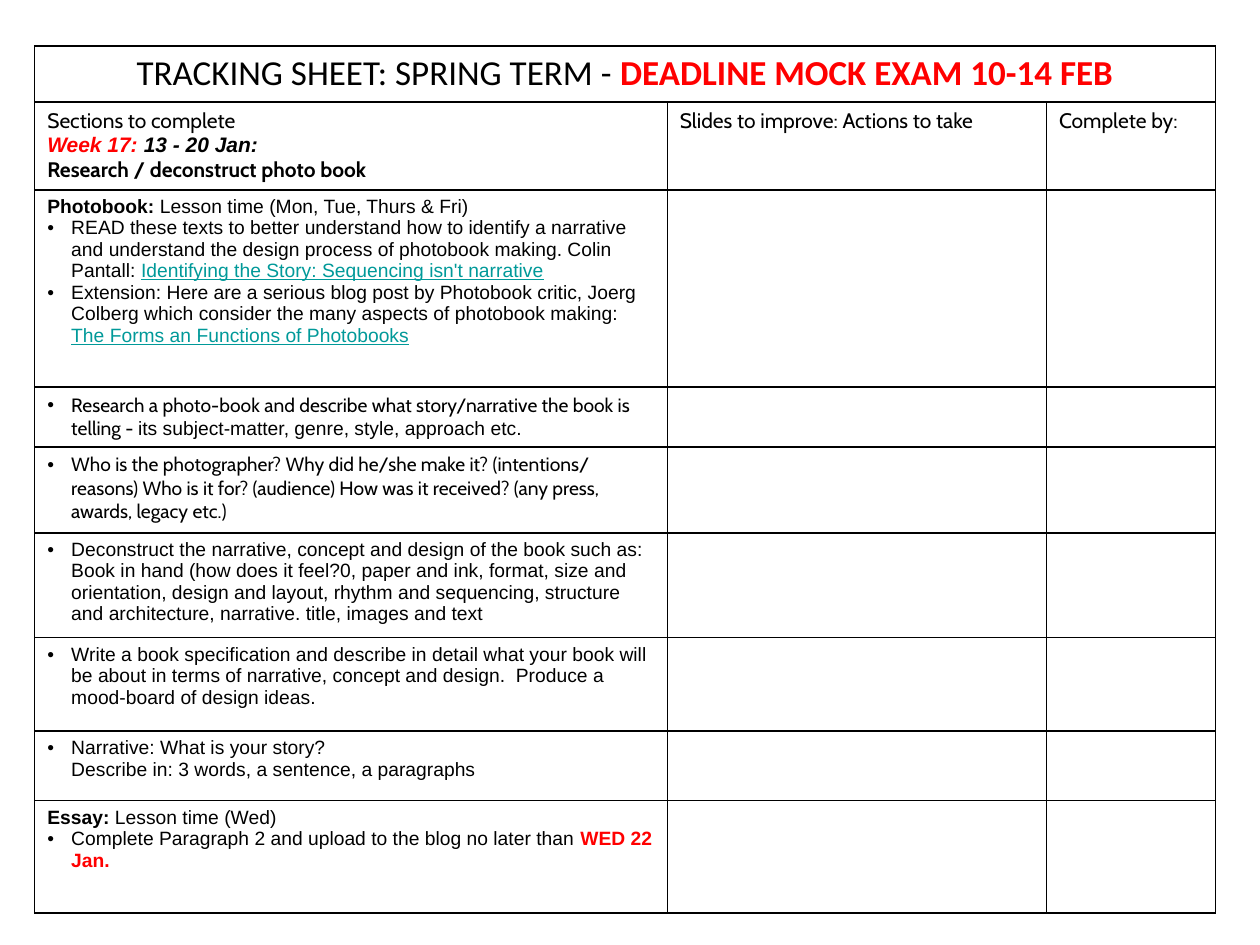
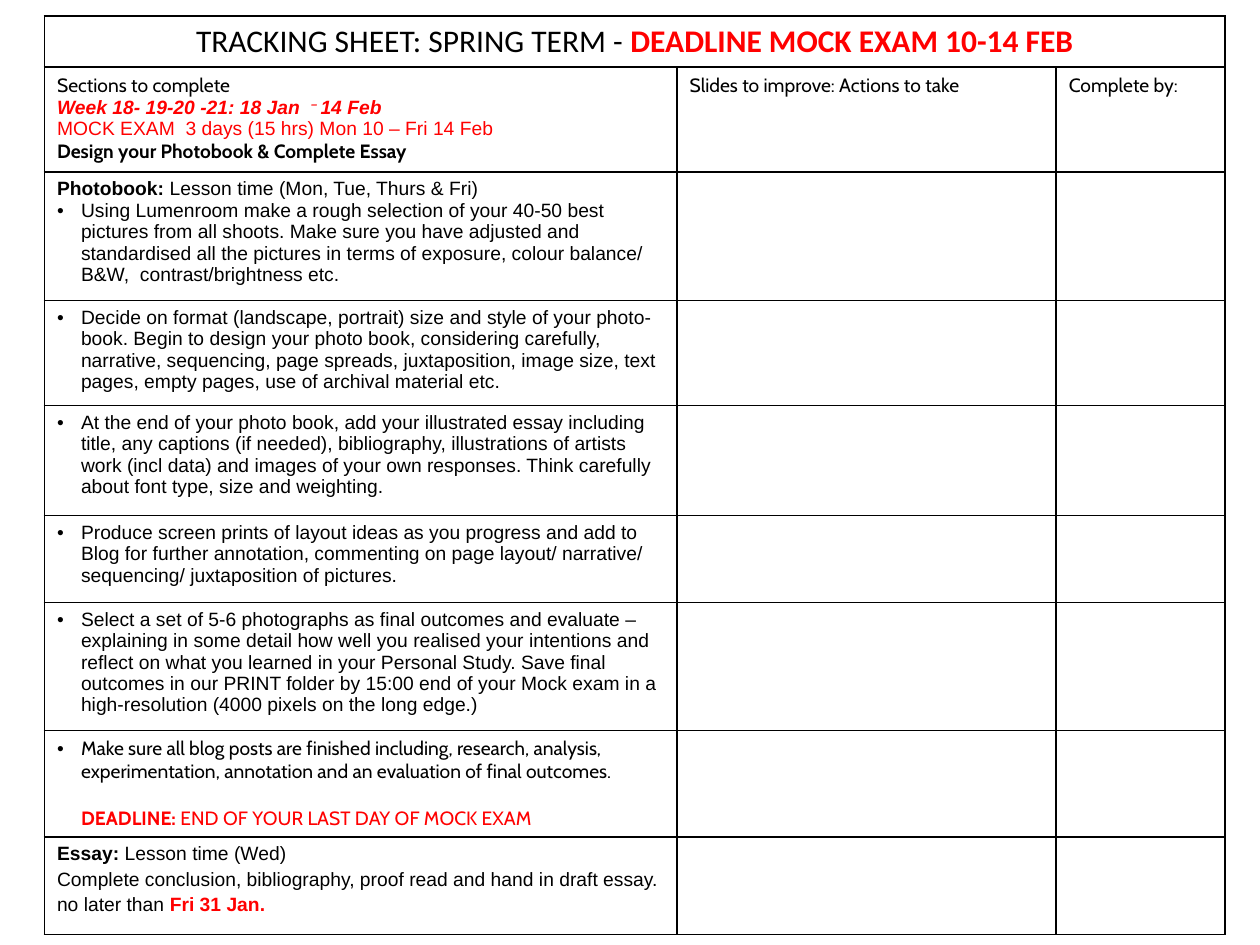
import dataclasses

import pptx
import pptx.dml.color
import pptx.enum.text
import pptx.oxml
import pptx.oxml.ns
import pptx.util

Pt = pptx.util.Pt
COLORS = {"text": "000000", "alert": "FF0000", "link": "009999", "rule": "000000"}
COLUMN_WIDTHS = [361.5, 216.7, 96.5]
INDENT = 13.68
BORDER_WIDTH = 1
HEADINGS = ["Slides to improve: Actions to take", "Complete by:"]
DRAWING = pptx.oxml.ns.nsdecls("a")


@dataclasses.dataclass
class Line:
    spans: list
    bullet: bool = False
    indent: bool = False
    before: float = 0
    centered: bool = False


def span(text, **style):
    return text, style


def line(*spans, **layout):
    return Line([span(item) if isinstance(item, str) else item for item in spans], **layout)


def bullet(*spans):
    return line(*spans, bullet=True, indent=True)


def lesson(subject, days):
    return line(span(f"{subject}: ", bold=True), f"Lesson time ({days})")


def write_text(para, text, size=11, font="Arial", color="text", bold=False,
               italic=False, underline=False, raised=False):
    run = para.add_run()
    run.text = text
    run.font.size = Pt(size)
    run.font.name = font
    run.font.bold = bold
    run.font.italic = italic
    run.font.underline = underline
    run.font.color.rgb = pptx.dml.color.RGBColor.from_string(COLORS[color])
    if raised:
        run.font._element.set("baseline", "30000")


def format_para(para, entry):
    properties = para._p.get_or_add_pPr()
    para.space_before = Pt(entry.before)
    if entry.centered:
        para.alignment = pptx.enum.text.PP_ALIGN.CENTER
    if entry.indent:
        properties.set("marL", str(int(Pt(INDENT))))
    if entry.bullet:
        properties.set("indent", str(-int(Pt(INDENT))))
        properties.append(pptx.oxml.parse_xml(f'<a:buFont {DRAWING} typeface="Arial"/>'))
        properties.append(pptx.oxml.parse_xml(f'<a:buChar {DRAWING} char="•"/>'))


def fill_cell(cell, lines):
    frame = cell.text_frame
    for index, entry in enumerate(lines):
        para = frame.add_paragraph() if index else frame.paragraphs[0]
        format_para(para, entry)
        for text, style in entry.spans:
            write_text(para, text, **style)


def style_cell(cell):
    properties = cell._tc.get_or_add_tcPr()
    for side in "LRTB":
        properties.append(pptx.oxml.parse_xml(
            f'<a:ln{side} {DRAWING} w="{int(Pt(BORDER_WIDTH))}"><a:solidFill>'
            f'<a:srgbClr val="{COLORS["rule"]}"/></a:solidFill></a:ln{side}>'))
    cell.fill.background()


def add_tracking_sheet(deck, left, top, row_heights, title_size, heading_size, sections, tasks):
    page = deck.slides.add_slide(deck.slide_layouts[6])
    table = page.shapes.add_table(
        len(row_heights), len(COLUMN_WIDTHS), Pt(left), Pt(top),
        Pt(sum(COLUMN_WIDTHS)), Pt(sum(row_heights))).table
    table.first_row = False
    table.horz_banding = False
    for column, width in zip(table.columns, COLUMN_WIDTHS):
        column.width = Pt(width)
    for row, height in zip(table.rows, row_heights):
        row.height = Pt(height)
    for cell in table.iter_cells():
        style_cell(cell)

    table.cell(0, 0).merge(table.cell(0, len(COLUMN_WIDTHS) - 1))
    fill_cell(table.cell(0, 0), [line(
        span("TRACKING SHEET: SPRING TERM - ", size=title_size, font="Calibri"),
        span("DEADLINE MOCK EXAM 10-14 FEB", size=title_size, font="Calibri",
             color="alert", bold=True),
        centered=True)])
    heading = {"size": heading_size, "font": "Cabin"}
    fill_cell(table.cell(1, 0), [line(span("Sections to complete", **heading))] + sections)
    for column, text in enumerate(HEADINGS, 1):
        fill_cell(table.cell(1, column), [line(span(text, **heading))])
    for row, lines in enumerate(tasks, 2):
        fill_cell(table.cell(row, 0), lines)


def add_research_sheet(deck):
    week = {"size": 12, "bold": True, "italic": True}
    sections = [
        line(span("Week 17: ", color="alert", **week), span("13 - 20 Jan:", **week)),
        line(span("Research / deconstruct photo book", size=12, font="Cabin", bold=True)),
    ]
    link = {"color": "link", "underline": True}
    tasks = [
        [lesson("Photobook", "Mon, Tue, Thurs & Fri"),
         bullet("READ these texts to better understand how to identify a narrative and "
                "understand the design process of photobook making. Colin Pantall: ",
                span("Identifying the Story: Sequencing isn't narrative", **link)),
         bullet("Extension: Here are a serious blog post by Photobook critic, Joerg Colberg "
                "which consider the many aspects of photobook making: ",
                span("The Forms an Functions of Photobooks", **link))],
        [bullet(span("Research a photo-book and describe what story/narrative the book is "
                     "telling - ", font="Cabin"),
                "its subject-matter, genre, style, approach etc.")],
        [bullet(span("Who is the photographer? Why did he/she make it? (intentions/ reasons) "
                     "Who is it for? (audience) How was it received? (any press, awards, "
                     "legacy etc.)", font="Cabin"))],
        [bullet("Deconstruct the narrative, concept and design of the book such as: Book in "
                "hand (how does it feel?0, paper and ink, format, size and orientation, "
                "design and layout, rhythm and sequencing, structure and architecture, "
                "narrative. title, images and text")],
        [bullet("Write a book specification and describe in detail what your book will be "
                "about in terms of narrative, concept and design.  Produce a mood-board of "
                "design ideas.")],
        [bullet("Narrative: What is your story?"),
         line("Describe in: 3 words, a sentence, a paragraphs", indent=True)],
        [lesson("Essay", "Wed"),
         bullet("Complete Paragraph 2 and upload to the blog no later than ",
                span("WED 22 Jan.", color="alert", bold=True))],
    ]
    add_tracking_sheet(deck, 19.8, 26.2,
                       [32, 50.3, 112.8, 33.7, 49.1, 60, 53.4, 39.7, 64.3],
                       20, 12, sections, tasks)


def add_design_sheet(deck):
    week = {"color": "alert", "bold": True, "italic": True}
    sections = [
        line(span("Week 18- 19-20 -21: 18 Jan  ", **week), span("– ", raised=True, **week),
             span("14 Feb", **week)),
        line(span("MOCK EXAM  3 days (15 hrs) Mon 10 – Fri 14 Feb", color="alert")),
        line(span("Design your Photobook & Complete Essay", font="Cabin", bold=True)),
    ]
    deadline = {"font": "Cabin", "color": "alert"}
    tasks = [
        [lesson("Photobook", "Mon, Tue, Thurs & Fri"),
         bullet("Using Lumenroom make a rough selection of your 40-50 best pictures from all "
                "shoots. Make sure you have adjusted and standardised all the pictures in "
                "terms of exposure, colour balance/ B&W,  contrast/brightness etc.")],
        [bullet("Decide on format (landscape, portrait) size and style of your photo-book. "
                "Begin to design your photo book, considering carefully, narrative, "
                "sequencing, page spreads, juxtaposition, image size, text pages, empty "
                "pages, use of archival material etc.")],
        [bullet("At the end of your photo book, add your illustrated essay including title, "
                "any captions (if needed), bibliography, illustrations of artists work (incl "
                "data) and images of your own responses. Think carefully about font type, "
                "size and weighting.")],
        [bullet("Produce screen prints of layout ideas as you progress and add to Blog for "
                "further annotation, commenting on page layout/ narrative/ sequencing/ "
                "juxtaposition of pictures.")],
        [bullet("Select a set of 5-6 photographs as final outcomes and evaluate – explaining "
                "in some detail how well you realised your intentions and reflect on what "
                "you learned in your Personal Study. Save final outcomes in our PRINT folder "
                "by 15:00 end of your Mock exam in a high-resolution (4000 pixels on the "
                "long edge.)")],
        [bullet(span("Make sure all blog posts are finished including, research, analysis, "
                     "experimentation, annotation and an evaluation of final outcomes.",
                     font="Cabin")),
         line(span("DEADLINE: ", bold=True, **deadline),
              span("END OF YOUR LAST DAY OF MOCK EXAM", **deadline),
              indent=True, before=13.4)],
        [lesson("Essay", "Wed"),
         line("Complete conclusion, bibliography, proof read and hand in draft essay.",
              before=2.2),
         line("no later than ", span("Fri 31 Jan.", color="alert", bold=True), before=2.2)],
    ]
    add_tracking_sheet(deck, 25.4, 9.2,
                       [28.7, 60, 73.4, 60, 62.9, 49.7, 73.1, 60, 55.7],
                       18, 11, sections, tasks)


def main():
    deck = pptx.Presentation()
    deck.slide_width = Pt(720)
    deck.slide_height = Pt(540)
    add_research_sheet(deck)
    add_design_sheet(deck)
    deck.save("out.pptx")


if __name__ == "__main__":
    main()
